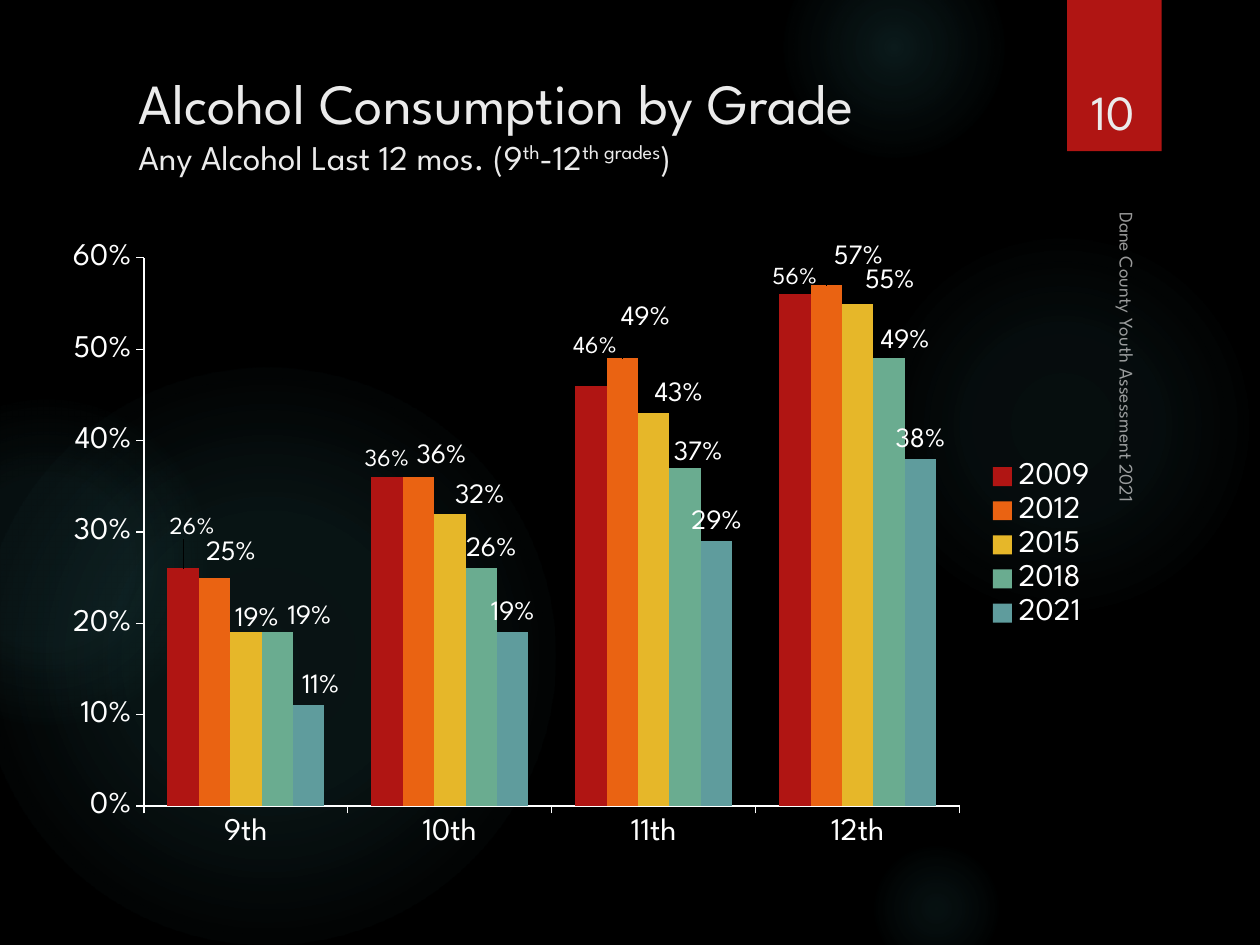
from dataclasses import dataclass, field

from lxml import etree
from pptx import Presentation
from pptx import util as u
from pptx.chart import data as chart_data
from pptx.dml import color
from pptx.enum import chart as ch, shapes, text
from pptx.oxml import ns, parse_xml

CELL = 0.25
FONT = "League Spartan"
COLORS = {
    "background": "000000", "glow": "50B9C1", "ribbon": "B01513",
    "heading": "EBEBEB", "white": "FFFFFF",
    "2009": "B01513", "2012": "EA6312", "2015": "E6B729",
    "2018": "6AAC90", "2021": "5F9C9D",
}
GRADES = ["9th", "10th", "11th", "12th"]


@dataclass
class Box:
    col: float
    row: float
    cols: float
    rows: float

    def lengths(self) -> list:
        return [u.Inches(n * CELL) for n in (self.col, self.row, self.cols, self.rows)]


@dataclass
class Glow:
    col: float
    row: float
    size: float
    stops: list


@dataclass
class Survey:
    year: str
    shares: list
    label_size: int = 16
    label_shifts: dict = field(default_factory=dict)


CHART_BOX = Box(1.68, 7.32, 33.56, 19.96)
GLOWS = [
    Glow(27.56, 7.32, 12.32, [(0, 7), (36, 6), (69, 0)]),
    Glow(24.88, -2, 7, [(0, 14), (36, 7), (73, 0)]),
    Glow(27.56, 26.68, 4.32, [(0, 9), (36, 5), (66, 0)]),
    Glow(-0.68, 11.68, 18.32, [(0, 11), (36, 10), (75, 0)]),
    Glow(-3.68, 12.68, 10.32, [(0, 8), (36, 8), (72, 0)]),
]
SURVEYS = [
    Survey("2009", [0.26, 0.36, 0.46, 0.56], 14, {0: (0.29, -0.76), 2: (0.13, -0.7)}),
    Survey("2012", [0.25, 0.36, 0.49, 0.57],
           label_shifts={0: (0.52, -0.19), 1: (0.73, -0.06), 2: (0.73, -0.67), 3: (1.02, -0.29)}),
    Survey("2015", [0.19, 0.32, 0.43, 0.55],
           label_shifts={0: (0.35, 0.19), 1: (0.95, 0.03), 2: (0.79, 0), 3: (1.02, -0.1)}),
    Survey("2018", [0.19, 0.26, 0.37, 0.49],
           label_shifts={0: (1.02, 0.13), 1: (0.32, 0), 2: (0.41, 0.13), 3: (0.51, 0.06)}),
    Survey("2021", [0.11, 0.19, 0.29, 0.38], label_shifts={0: (0.38, 0)}),
]


def rgb(name: str) -> color.RGBColor:
    return color.RGBColor.from_string(COLORS[name])


def style(font, size: float, tint: str) -> None:
    font.name = FONT
    font.size = u.Pt(size)
    font.color.rgb = rgb(tint)


def add_glow(slide, glow: Glow) -> None:
    box = Box(glow.col, glow.row, glow.size, glow.size)
    orb = slide.shapes.add_shape(shapes.MSO_SHAPE.OVAL, *box.lengths())
    orb.shadow.inherit = False
    orb.line.fill.background()
    stops = "".join(
        f'<a:gs pos="{pos * 1000}"><a:srgbClr val="{COLORS["glow"]}">'
        f'<a:alpha val="{alpha * 1000}"/></a:srgbClr></a:gs>'
        for pos, alpha in glow.stops)
    fill = parse_xml(
        f'<a:gradFill {ns.nsdecls("a")} rotWithShape="1"><a:gsLst>{stops}</a:gsLst>'
        '<a:path path="circle"><a:fillToRect l="50000" t="50000" r="50000" b="50000"/>'
        '</a:path></a:gradFill>')
    orb.element.spPr.find(ns.qn("a:prstGeom")).addnext(fill)


def add_ribbon(slide) -> None:
    ribbon = slide.shapes.add_shape(
        shapes.MSO_SHAPE.RECTANGLE, *Box(33.88, 0, 3, 4.8).lengths())
    ribbon.fill.solid()
    ribbon.fill.fore_color.rgb = rgb("ribbon")
    ribbon.line.fill.background()
    ribbon.shadow.inherit = False
    ribbon.element.spPr.find(ns.qn("a:effectLst")).append(parse_xml(
        f'<a:outerShdw {ns.nsdecls("a")} blurRad="{u.Pt(3)}" dist="{u.Pt(2)}" dir="5400000">'
        f'<a:srgbClr val="{COLORS["background"]}"><a:alpha val="45000"/></a:srgbClr>'
        '</a:outerShdw>'))


def add_text(slide, box: Box, words: str, size: float, tint: str, anchor):
    holder = slide.shapes.add_textbox(*box.lengths())
    frame = holder.text_frame
    frame.word_wrap = True
    frame.vertical_anchor = anchor
    frame.text = words
    style(frame.paragraphs[0].runs[0].font, size, tint)
    return holder


def add_heading(slide) -> None:
    heading = add_text(slide, Box(4, 1.76, 29.68, 4.24), "Alcohol Consumption by Grade",
                       32.4, "heading", text.MSO_ANCHOR.MIDDLE)
    line = heading.text_frame.paragraphs[0]
    line.add_line_break()
    pieces = ["Any Alcohol Last 12 mos. (9", "th", "-12", "th grades", ")"]
    for order, words in enumerate(pieces):
        piece = line.add_run()
        piece.text = words
        style(piece.font, 19.8, "heading")
        if order % 2:
            piece.font._element.set("baseline", "30000")


def manual_layout(inner: bool = False, **shares: float):
    layout = etree.Element(ns.qn("c:layout"))
    manual = etree.SubElement(layout, ns.qn("c:manualLayout"))
    if inner:
        etree.SubElement(manual, ns.qn("c:layoutTarget"), val="inner")
    if "w" in shares:
        for mode in ("xMode", "yMode"):
            etree.SubElement(manual, ns.qn(f"c:{mode}"), val="edge")
    for key, share in shares.items():
        etree.SubElement(manual, ns.qn(f"c:{key}"), val=str(share))
    return layout


def style_series(series, survey: Survey) -> None:
    series.format.fill.solid()
    series.format.fill.fore_color.rgb = rgb(survey.year)
    series.invert_if_negative = False
    labels = series.data_labels
    labels.show_value = True
    labels.number_format = "0%"
    labels.number_format_is_linked = False
    labels.position = ch.XL_LABEL_POSITION.OUTSIDE_END
    style(labels.font, survey.label_size, "white")
    for index in survey.label_shifts:
        label = series.points[index].data_label
        style(label.font, survey.label_size, "white")
        label.position = ch.XL_LABEL_POSITION.OUTSIDE_END
    for entry in series._element.iter(ns.qn("c:dLbl")):
        number = entry.find(ns.qn("c:idx"))
        across, down = survey.label_shifts[int(number.get("val"))]
        number.addnext(manual_layout(x=across / CHART_BOX.cols, y=down / CHART_BOX.rows))


def add_grade_chart(slide) -> None:
    numbers = chart_data.CategoryChartData(number_format="0%")
    numbers.categories = GRADES
    for survey in SURVEYS:
        numbers.add_series(survey.year, survey.shares)
    chart = slide.shapes.add_chart(
        ch.XL_CHART_TYPE.COLUMN_CLUSTERED, *CHART_BOX.lengths(), numbers).chart
    style(chart.font, 18, "white")
    chart.has_title = False
    chart.has_legend = True
    chart.legend.position = ch.XL_LEGEND_POSITION.RIGHT
    chart.legend.include_in_layout = False
    style(chart.legend.font, 18, "white")
    for axis in (chart.category_axis, chart.value_axis):
        axis.has_major_gridlines = False
        axis.major_tick_mark = ch.XL_TICK_MARK.OUTSIDE
        axis.format.line.color.rgb = rgb("white")
        axis.format.line.width = u.Pt(0.75)
        style(axis.tick_labels.font, 18, "white")
    chart.value_axis.minimum_scale = 0
    chart.value_axis.maximum_scale = 0.6
    chart.value_axis.major_unit = 0.1
    chart.value_axis.tick_labels.number_format = "0%"
    chart.value_axis.tick_labels.number_format_is_linked = False
    plot = chart.plots[0]
    plot.gap_width = 150
    plot.overlap = 0
    plot.vary_by_categories = False
    for series, survey in zip(plot.series, SURVEYS):
        style_series(series, survey)
    area = chart.element.find(".//" + ns.qn("c:plotArea"))
    for old in area.findall(ns.qn("c:layout")):
        area.remove(old)
    area.insert(0, manual_layout(True, x=2.89 / CHART_BOX.cols, y=0.87 / CHART_BOX.rows,
                                 w=25.9 / CHART_BOX.cols, h=17.4 / CHART_BOX.rows))
    legend = chart.element.find(".//" + ns.qn("c:legend"))
    for old in legend.findall(ns.qn("c:layout")):
        legend.remove(old)
    legend.find(ns.qn("c:legendPos")).addnext(manual_layout(x=0.88, y=0.36, w=0.11, h=0.28))


def main() -> None:
    deck = Presentation()
    deck.slide_width, deck.slide_height = u.Inches(40 * CELL), u.Inches(30 * CELL)
    slide = deck.slides.add_slide(deck.slide_layouts[6])
    slide.background.fill.solid()
    slide.background.fill.fore_color.rgb = rgb("background")
    for glow in GLOWS:
        add_glow(slide, glow)
    add_ribbon(slide)
    add_heading(slide)
    add_grade_chart(slide)
    number = add_text(slide, Box(33.96, 1.28, 2.76, 3.36), "10", 28, "heading",
                      text.MSO_ANCHOR.BOTTOM)
    number.text_frame.paragraphs[0].alignment = text.PP_ALIGN.CENTER
    source = add_text(slide, Box(27.28, 14.28, 16.88, 1), "Dane County Youth Assessment 2021",
                      11, "white", text.MSO_ANCHOR.BOTTOM)
    source.rotation = 90
    tint = source.element.find(".//" + ns.qn("a:srgbClr"))
    etree.SubElement(tint, ns.qn("a:alpha"), val="60000")
    deck.save("out.pptx")


if __name__ == "__main__":
    main()
